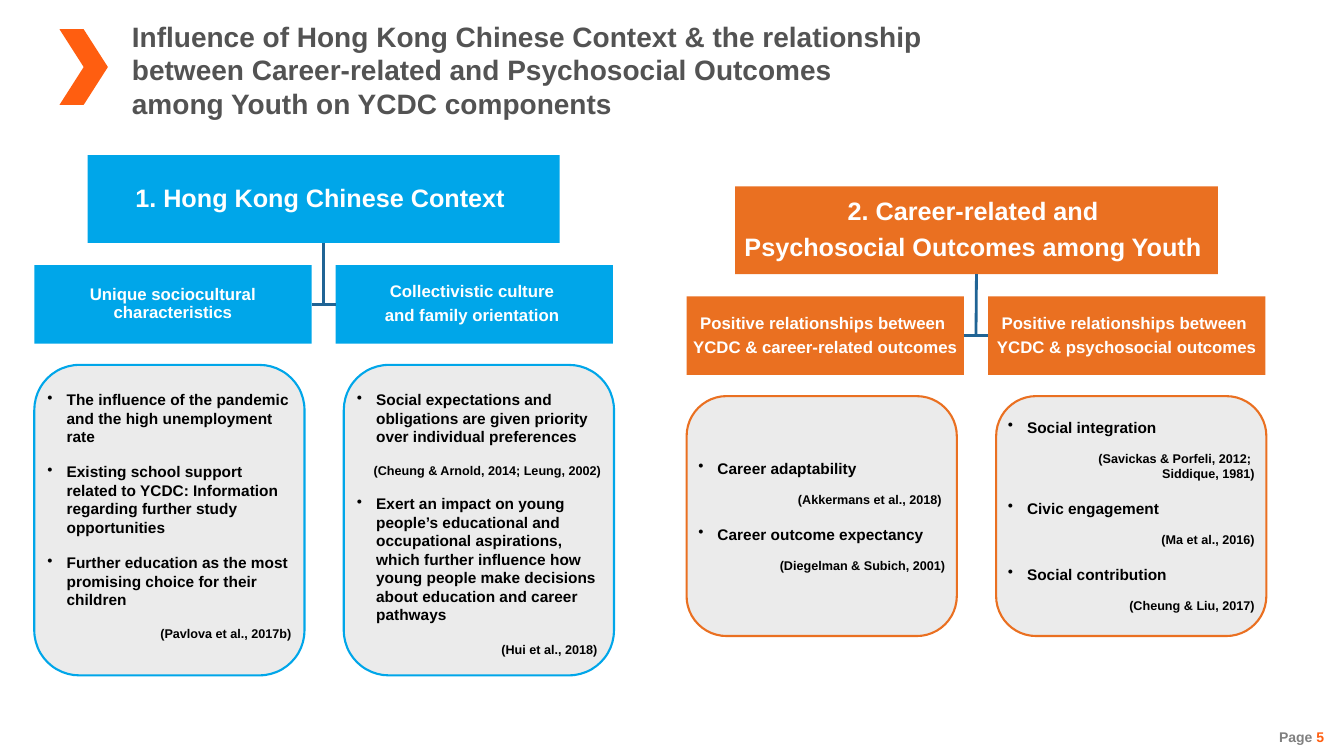
from dataclasses import dataclass

import pptx
import pptx.dml.color
import pptx.enum.shapes
import pptx.enum.text
import pptx.oxml
import pptx.oxml.ns
import pptx.shapes.autoshape
import pptx.shapes.connector
import pptx.slide
import pptx.text.text
import pptx.util

Align = pptx.enum.text.PP_ALIGN
Anchor = pptx.enum.text.MSO_ANCHOR
Kind = pptx.enum.shapes.MSO_SHAPE
Pt = pptx.util.Pt


@dataclass(frozen=True)
class Theme:
    font: str = "Arial"
    grey: str = "535353"
    pale: str = "808080"
    accent: str = "FF5E10"
    blue: str = "00A6E9"
    orange: str = "EA7021"
    link: str = "206495"
    panel: str = "EBEBEB"
    white: str = "FFFFFF"
    black: str = "000000"
    title: int = 20
    head: int = 18
    label: int = 12
    item: int = 11
    page: int = 10
    cite: int = 9


@dataclass(frozen=True)
class Box:
    x: int
    y: int
    w: int
    h: int


@dataclass(frozen=True)
class Line:
    """One paragraph of a panel: a bullet item or a right-aligned citation."""
    text: str
    cite: bool = False
    gap: float = 0


@dataclass(frozen=True)
class Branch:
    label: str
    lines: tuple[Line, ...]
    anchor: Anchor = Anchor.TOP


@dataclass(frozen=True)
class Tree:
    head: str
    box: Box
    left: int
    color: str
    depth: int
    inset: int
    pair: tuple[Branch, Branch]


THEME = Theme()
LABEL_W, LABEL_H, LABEL_STEP = 275, 78, 299
PANEL_W, PANEL_STEP = 268, 307
HEAD_DROP, PANEL_DROP = 109, 208

TREES = (
    Tree("1. Hong Kong Chinese Context ", Box(87, 154, 468, 87), 34, THEME.blue, 308, 12, (
        Branch("Unique sociocultural characteristics", (
            Line("The influence of the pandemic and the high unemployment rate"),
            Line("Existing school support related to YCDC: Information regarding "
                 "further study opportunities", gap=12),
            Line("Further education as the most promising choice for their children", gap=12),
            Line("(Pavlova et al., 2017b)", True, 12.6))),
        Branch("Collectivistic culture \nand family orientation ", (
            Line("Social expectations and obligations are given priority over "
                 "individual preferences"),
            Line("(Cheung & Arnold, 2014; Leung, 2002)", True, 12),
            Line("Exert an impact on young people’s educational and occupational "
                 "aspirations, which further influence how young people make "
                 "decisions about education and career pathways", gap=12),
            Line("(Hui et al., 2018) ", True, 12.6))))),
    Tree("2. Career-related and \nPsychosocial Outcomes among Youth ",
         Box(729, 185, 479, 87), 681, THEME.orange, 238, 10, (
        Branch("Positive relationships between \nYCDC & career-related outcomes", (
            Line("Career adaptability"),
            Line("(Akkermans et al., 2018) ", True, 10.4),
            Line("Career outcome expectancy", gap=12.6),
            Line("(Diegelman & Subich, 2001)", True, 10.4)), Anchor.MIDDLE),
        Branch("Positive relationships between \nYCDC & psychosocial outcomes", (
            Line("Social integration"),
            Line("(Savickas & Porfeli, 2012; ", True, 10.4),
            Line("Siddique, 1981)", True),
            Line("Civic engagement", gap=12.6),
            Line("(Ma et al., 2016)", True, 10.4),
            Line("Social contribution", gap=12.6),
            Line("(Cheung & Liu, 2017)", True, 10.4))))),
)


def px(n: int) -> int:
    """Turn px, at 100 to the inch, into EMU."""
    return n * 9144


def rgb(color: str) -> pptx.dml.color.RGBColor:
    return pptx.dml.color.RGBColor.from_string(color)


def style(para: pptx.text.text._Paragraph, size: int, color: str) -> None:
    for run in para.runs:
        run.font.name = THEME.font
        run.font.size = Pt(size)
        run.font.bold = True
        run.font.color.rgb = rgb(color)


def frame(text: pptx.text.text.TextFrame, side: int, top: int, base: int,
          anchor: Anchor, wrap: bool = True) -> None:
    text.margin_left = text.margin_right = px(side)
    text.margin_top, text.margin_bottom = px(top), px(base)
    text.vertical_anchor = anchor
    text.word_wrap = wrap


def shape(slide: pptx.slide.Slide, kind: Kind, box: Box,
          fill: str, edge: str = "") -> pptx.shapes.autoshape.Shape:
    form = slide.shapes.add_shape(kind, px(box.x), px(box.y), px(box.w), px(box.h))
    form.shadow.inherit = False
    form.fill.solid()
    form.fill.fore_color.rgb = rgb(fill)
    if edge:
        form.line.color.rgb = rgb(edge)
        form.line.width = Pt(1.5)
    else:
        form.line.fill.background()
    return form


def label(slide: pptx.slide.Slide, box: Box, text: str, size: int,
          fill: str) -> pptx.shapes.autoshape.Shape:
    form = shape(slide, Kind.RECTANGLE, box, fill)
    frame(form.text_frame, 1, 1, 1, Anchor.MIDDLE)
    form.text_frame.text = text
    for para in form.text_frame.paragraphs:
        para.alignment = Align.CENTER
        para.line_spacing = 0.9
        para.space_after = Pt(size * 0.35)
        style(para, size, THEME.white)
    return form


def bullet(para: pptx.text.text._Paragraph) -> None:
    props = para._p.get_or_add_pPr()
    props.set("marL", str(px(19)))
    props.set("indent", str(px(-19)))
    mark = pptx.oxml.parse_xml(f'<a:buChar {pptx.oxml.ns.nsdecls("a")} char="•"/>')
    props.append(mark)


def panel(slide: pptx.slide.Slide, box: Box, branch: Branch, tree: Tree) -> None:
    form = shape(slide, Kind.ROUNDED_RECTANGLE, box, THEME.panel, tree.color)
    text = form.text_frame
    frame(text, 0, tree.inset, 10, branch.anchor)
    text.text = "\n".join(line.text for line in branch.lines)
    for para, line in zip(text.paragraphs, branch.lines):
        para.alignment = Align.RIGHT if line.cite else Align.LEFT
        if line.gap:
            para.space_before = Pt(line.gap)
        if not line.cite:
            bullet(para)
        style(para, THEME.cite if line.cite else THEME.item, THEME.black)


def link(slide: pptx.slide.Slide, x: int, y: int, right: int,
         low: int) -> pptx.shapes.connector.Connector:
    line = slide.shapes.add_connector(pptx.enum.shapes.MSO_CONNECTOR.STRAIGHT,
                                      px(x), px(y), px(right), px(low))
    line.line.color.rgb = rgb(THEME.link)
    line.line.width = Pt(2)
    line._element.spPr.append(
        pptx.oxml.parse_xml(f'<a:effectLst {pptx.oxml.ns.nsdecls("a")}/>'))
    return line


def draw(slide: pptx.slide.Slide, tree: Tree) -> None:
    top = tree.box
    y = top.y + HEAD_DROP
    mid, rail = top.x + top.w // 2, y + LABEL_H // 2
    head = label(slide, top, tree.head, THEME.head, tree.color)
    sides = []
    for i, branch in enumerate(tree.pair):
        spot = Box(tree.left + i * LABEL_STEP, y, LABEL_W, LABEL_H)
        sides.append(label(slide, spot, branch.label, THEME.label, tree.color))
        spot = Box(tree.left + i * PANEL_STEP, top.y + PANEL_DROP, PANEL_W, tree.depth)
        panel(slide, spot, branch, tree)
    link(slide, mid, top.y + top.h, mid, rail).begin_connect(head, 2)
    bar = link(slide, tree.left + LABEL_W, rail, tree.left + LABEL_STEP, rail)
    bar.begin_connect(sides[0], 3)
    bar.end_connect(sides[1], 1)


def title(slide: pptx.slide.Slide) -> None:
    text = slide.shapes.add_textbox(px(121), px(14), px(1075), px(111)).text_frame
    frame(text, 10, 5, 5, Anchor.TOP)
    text.text = ("Influence of Hong Kong Chinese Context & the relationship\n"
                 "between Career-related and Psychosocial Outcomes\n"
                 "among Youth on YCDC components")
    for para in text.paragraphs:
        style(para, THEME.title, THEME.grey)


def footer(slide: pptx.slide.Slide) -> None:
    text = slide.shapes.add_textbox(px(1258), px(718), px(65), px(27)).text_frame
    frame(text, 10, 5, 5, Anchor.TOP, False)
    para = text.paragraphs[0]
    para.text = "Page "
    para.alignment = Align.RIGHT
    count = para.add_run()
    count.text = "5"
    style(para, THEME.page, THEME.pale)
    count.font.color.rgb = rgb(THEME.accent)


def main() -> None:
    deck = pptx.Presentation()
    deck.slide_width, deck.slide_height = px(1333), px(750)
    slide = deck.slides.add_slide(deck.slide_layouts[6])
    title(slide)
    footer(slide)
    shape(slide, Kind.CHEVRON, Box(59, 29, 48, 75), THEME.accent)
    for tree in TREES:
        draw(slide, tree)
    deck.save("out.pptx")


if __name__ == "__main__":
    main()
